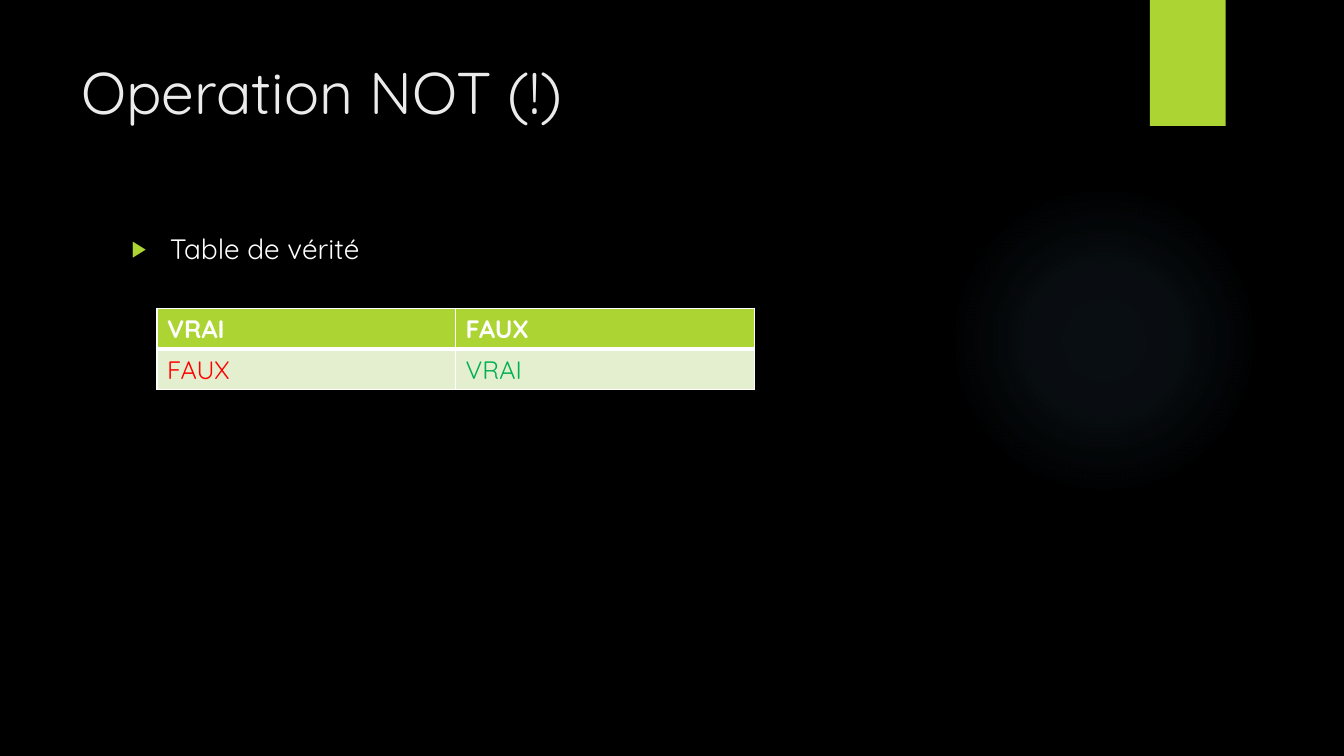
from pptx import Presentation
from pptx.dml.color import RGBColor
from pptx.enum.shapes import MSO_SHAPE as Shape
from pptx.enum.text import MSO_ANCHOR as Anchor, PP_ALIGN as Align
from pptx.oxml import parse_xml
from pptx.oxml.ns import nsdecls
from pptx.util import Inches, Pt

BLACK = RGBColor(0x00, 0x00, 0x00)
WHITE = RGBColor(0xFF, 0xFF, 0xFF)
OFF_WHITE = RGBColor(0xEB, 0xEB, 0xEB)
LIME = RGBColor(0xAC, 0xD4, 0x33)
PALE_LIME = RGBColor(0xE3, 0xEF, 0xCE)
SKY = RGBColor(0x7A, 0xC4, 0xF0)
RED = RGBColor(0xFF, 0x00, 0x00)
GREEN = RGBColor(0x00, 0xB0, 0x50)

COLUMNS, ROWS = 16, 9
HEIGHT = Inches(7.5)
UNIT = HEIGHT / ROWS


def grid(*lengths):
    """Turn grid columns or rows into slide lengths."""
    return [round(length * UNIT) for length in lengths]


def element(tag, attributes="", inner=""):
    return parse_xml(f'<a:{tag} {nsdecls("a")} {attributes}>{inner}</a:{tag}>')


class SlideBuilder:
    font = "Quicksand"

    def __init__(self, deck, background):
        self.slide = deck.slides.add_slide(deck.slide_layouts[6])
        self.slide.background.fill.solid()
        self.slide.background.fill.fore_color.rgb = background

    def style(self, paragraph, size, color, bold=False):
        for run in paragraph.runs:
            font = run.font
            font.name, font.size, font.bold = self.font, Pt(size), bold
            font.color.rgb = color

    def block(self, kind, place):
        block = self.slide.shapes.add_shape(kind, *grid(*place))
        block.shadow.inherit = False
        block.line.fill.background()
        return block

    def panel(self, place, color):
        panel = self.block(Shape.RECTANGLE, place)
        panel.fill.solid()
        panel.fill.fore_color.rgb = color

    def glow(self, place, color, stops):
        """Draw a disc fading outwards; stops are (position, opacity) in percent."""
        disc = self.block(Shape.OVAL, place)
        marks = "".join(
            f'<a:gs pos="{position * 1000}"><a:srgbClr val="{color}">'
            f'<a:alpha val="{opacity * 1000}"/></a:srgbClr></a:gs>'
            for position, opacity in stops)
        center = '<a:fillToRect l="50000" t="50000" r="50000" b="50000"/>'
        gradient = element("gradFill", 'rotWithShape="1"',
                           f'<a:gsLst>{marks}</a:gsLst><a:path path="circle">{center}</a:path>')
        disc.element.spPr.find("{*}prstGeom").addnext(gradient)

    def text(self, place, words, size, color, bullet_color=None):
        frame = self.slide.shapes.add_textbox(*grid(*place)).text_frame
        frame.word_wrap = True
        frame.vertical_anchor = Anchor.TOP
        frame.text = words
        paragraph = frame.paragraphs[0]
        paragraph.alignment = Align.LEFT
        if bullet_color is not None:
            self.bullet(paragraph, bullet_color)
        self.style(paragraph, size, color)

    def bullet(self, paragraph, color):
        properties = paragraph._p.get_or_add_pPr()
        indent = Inches(0.38)
        properties.set("marL", str(indent))
        properties.set("indent", str(-indent))
        properties.append(element("buClr", inner=f'<a:srgbClr val="{color}"/>'))
        properties.append(element("buSzPct", 'val="80000"'))
        properties.append(element("buFont", 'typeface="Arial"'))
        properties.append(element("buChar", 'char="▶"'))

    def borders(self, cell, top, bottom):
        properties = cell._tc.get_or_add_tcPr()
        widths = {"lnL": 1, "lnR": 1, "lnT": top, "lnB": bottom}
        for place, (side, width) in enumerate(widths.items()):
            line = element(side, f'w="{Pt(width)}"',
                           f'<a:solidFill><a:srgbClr val="{WHITE}"/></a:solidFill>')
            properties.insert(place, line)

    def truth_table(self, place, rows):
        """Fill a table whose first row is the header; cells are (word, color)."""
        table = self.slide.shapes.add_table(len(rows), len(rows[0]), *grid(*place)).table
        for r, row in enumerate(rows):
            header = r == 0
            for c, (word, color) in enumerate(row):
                cell = table.cell(r, c)
                cell.text = word
                cell.fill.solid()
                cell.fill.fore_color.rgb = LIME if header else PALE_LIME
                self.style(cell.text_frame.paragraphs[0], 18, color, bold=header)
                self.borders(cell, top=1 if header else 3, bottom=3 if header else 1)


def main():
    deck = Presentation()
    deck.slide_width, deck.slide_height = round(COLUMNS * UNIT), HEIGHT

    builder = SlideBuilder(deck, BLACK)
    builder.glow((11.29, 2.2, 3.7, 3.7), SKY, [(0, 7), (36, 6), (69, 0)])
    builder.panel((13.69, 0, 0.9, 1.5), LIME)
    builder.text((0.85, 0.6, 12.35, 1.84), "Operation NOT (!)", 42, OFF_WHITE)
    builder.text((1.45, 2.7, 11.74, 5.51), "Table de vérité", 20, WHITE, bullet_color=LIME)
    builder.truth_table((1.87, 3.67, 7.11, 0.97), [
        [("VRAI", WHITE), ("FAUX", WHITE)],
        [("FAUX", RED), ("VRAI", GREEN)],
    ])
    deck.save("out.pptx")


if __name__ == "__main__":
    main()
